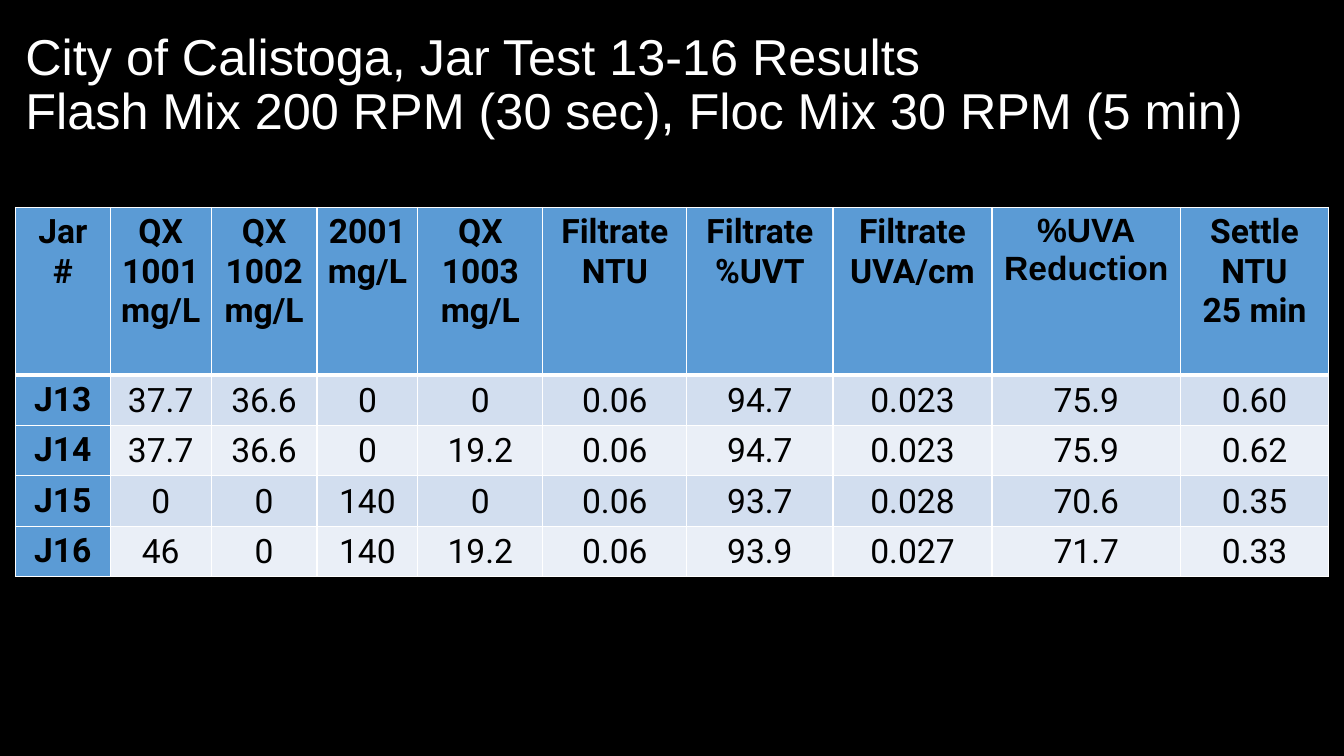
from lxml.etree import SubElement
from pptx import Presentation
from pptx.dml.color import RGBColor
from pptx.enum.text import MSO_ANCHOR as Anchor, PP_ALIGN as Align
from pptx.oxml.ns import qn
from pptx.util import Cm, Pt

WHITE, BLACK, BLUE = "FFFFFF", "000000", "5B9BD5"
BANDS = ["D2DEEF", "EAEFF7"]
TITLE = ["City of Calistoga, Jar Test 13-16 Results",
         "Flash Mix 200 RPM (30 sec), Floc Mix 30 RPM (5 min)"]
COLUMNS = [  # heading lines, width in cm
    (["Jar", "#"], 2.39),
    (["QX", "1001", "mg/L"], 2.54),
    (["QX", "1002", "mg/L"], 2.67),
    (["2001", "mg/L"], 2.54),
    (["QX", "1003", "mg/L"], 3.15),
    (["Filtrate", "NTU"], 3.63),
    (["Filtrate", "%UVT"], 3.68),
    (["Filtrate", "UVA/cm"], 4.01),
    (["%UVA", "Reduction"], 4.75),
    (["Settle", "NTU", "25 min"], 3.73),
]
JARS = [
    ["J13", "37.7", "36.6", "0", "0", "0.06", "94.7", "0.023", "75.9", "0.60"],
    ["J14", "37.7", "36.6", "0", "19.2", "0.06", "94.7", "0.023", "75.9", "0.62"],
    ["J15", "0", "0", "140", "0", "0.06", "93.7", "0.028", "70.6", "0.35"],
    ["J16", "46", "0", "140", "19.2", "0.06", "93.9", "0.027", "71.7", "0.33"],
]
HEADER_HEIGHT, JAR_HEIGHT = 4.22, 1.04


def color(value):
    return RGBColor.from_string(value)


def add_span(para, text, size, font, ink, bold=False):
    span = para.add_run()
    span.text = text
    span.font.size, span.font.name, span.font.bold = Pt(size), font, bold
    span.font.color.rgb = color(ink)


def add_title(page, left, top, width, height):
    box = page.shapes.add_textbox(Cm(left), Cm(top), Cm(width), Cm(height))
    frame = box.text_frame
    frame.word_wrap = True
    frame.vertical_anchor = Anchor.MIDDLE
    para = frame.paragraphs[0]
    para.line_spacing = 0.9
    for index, line in enumerate(TITLE):
        if index:
            para.add_line_break()
        add_span(para, line, 36, "Arial", WHITE)


def set_borders(cell, **widths):
    """Draw white edges; widths in points by side: L, R, T, B."""
    properties = cell._tc.get_or_add_tcPr()
    for side in "LRTB":
        line = SubElement(properties, qn(f"a:ln{side}"),
                          w=str(Pt(widths.get(side, 1))))
        paint = SubElement(line, qn("a:solidFill"))
        SubElement(paint, qn("a:srgbClr"), val=WHITE)


def fill_cell(cell, lines, fill, font="Roboto", bold=False):
    cell.fill.solid()
    cell.fill.fore_color.rgb = color(fill)
    frame = cell.text_frame
    for index, line in enumerate(lines):
        para = frame.add_paragraph() if index else frame.paragraphs[0]
        para.alignment = Align.CENTER
        add_span(para, line, 24, font, BLACK, bold)


def fill_header(table):
    for column, (lines, width) in enumerate(COLUMNS):
        table.columns[column].width = Cm(width)
        cell = table.cell(0, column)
        set_borders(cell, B=3)
        font = "Arial" if "%UVA" in lines else "Roboto"
        fill_cell(cell, lines, BLUE, font, bold=True)


def fill_jar(table, row, values):
    table.rows[row].height = Cm(JAR_HEIGHT)
    for column, value in enumerate(values):
        cell = table.cell(row, column)
        set_borders(cell, T=3 if row == 1 else 1)
        if column == 0:
            fill_cell(cell, [value], BLUE, bold=True)
            continue
        fill_cell(cell, [value], BANDS[(row - 1) % 2])
        cell.vertical_anchor = Anchor.MIDDLE
        cell.margin_left = cell.margin_right = cell.margin_top = Cm(0.03)
        cell.margin_bottom = 0


def add_results(page, left, top):
    width = sum(width for _, width in COLUMNS)
    height = HEADER_HEIGHT + JAR_HEIGHT * len(JARS)
    table = page.shapes.add_table(len(JARS) + 1, len(COLUMNS), Cm(left), Cm(top),
                                  Cm(width), Cm(height)).table
    table.first_col = True
    table.rows[0].height = Cm(HEADER_HEIGHT)
    fill_header(table)
    for row, values in enumerate(JARS, start=1):
        fill_jar(table, row, values)


def main():
    deck = Presentation()
    deck.slide_width, deck.slide_height = Cm(33.87), Cm(19.05)
    page = deck.slides.add_slide(deck.slide_layouts[6])
    page.background.fill.solid()
    page.background.fill.fore_color.rgb = color(BLACK)
    add_title(page, 0.39, 0.33, 33.07, 3.68)
    add_results(page, 0.39, 5.23)
    deck.save("out.pptx")


if __name__ == "__main__":
    main()
